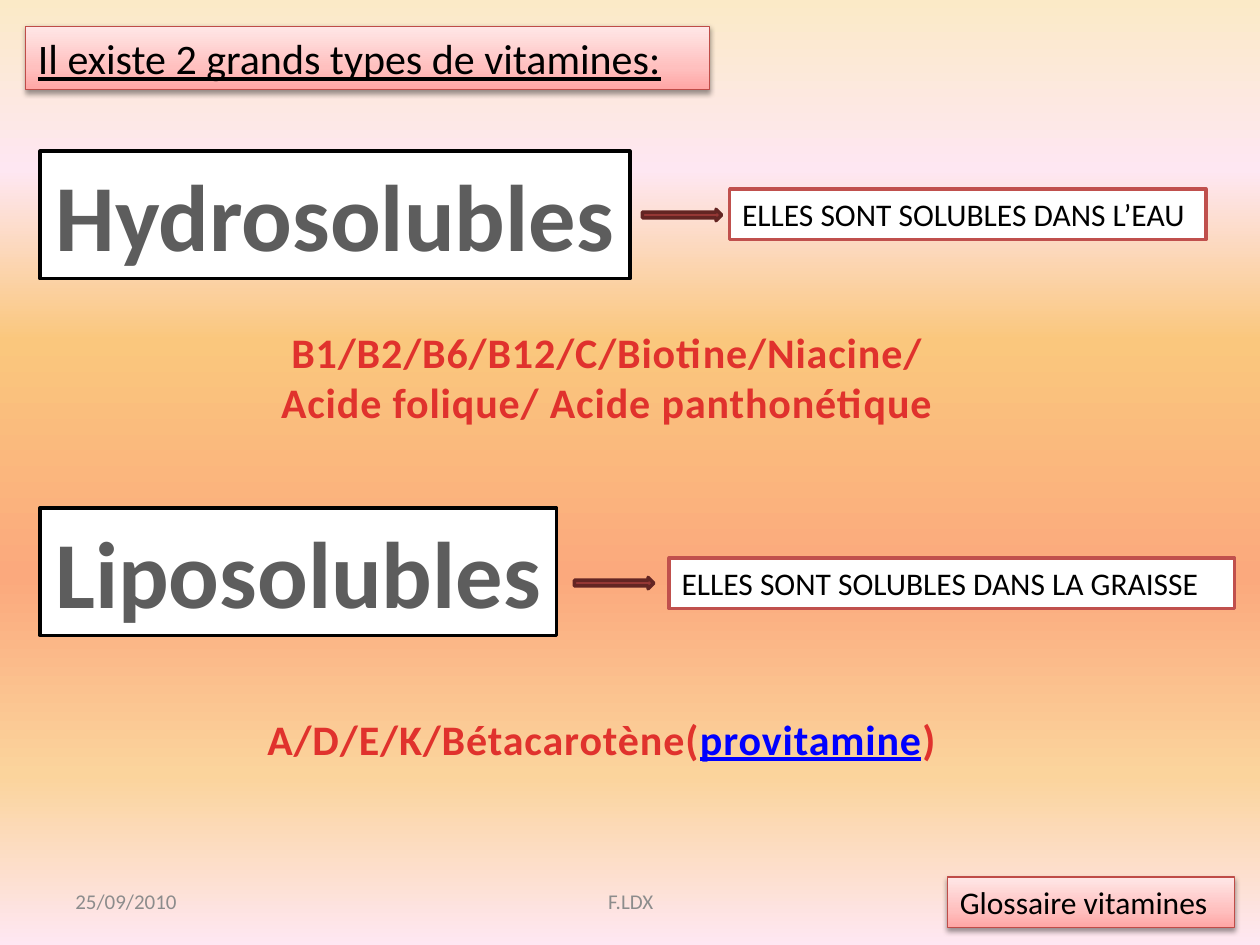
import dataclasses

import pptx
import pptx.dml.color
import pptx.enum.shapes
import pptx.enum.text
import pptx.oxml
import pptx.oxml.ns
import pptx.util

Cm, Pt = pptx.util.Cm, pptx.util.Pt
RGB = pptx.dml.color.RGBColor.from_string
qn = pptx.oxml.ns.qn
SHAPE = pptx.enum.shapes.MSO_SHAPE
ALIGN = pptx.enum.text.PP_ALIGN
ANCHOR = pptx.enum.text.MSO_ANCHOR
NS = pptx.oxml.ns.nsdecls("a")


@dataclasses.dataclass(frozen=True)
class Theme:
    font: str = "Calibri"
    black: str = "000000"
    white: str = "FFFFFF"
    heading: str = "5D5D5D"
    vitamins: str = "E0322D"
    link: str = "0000FF"
    footer: str = "8C8C8C"
    note_line: str = "C0504D"
    label_line: str = "BF4C48"
    arrow: str = "953735"
    arrow_line: str = "632523"
    label: tuple = ((0, "FFA6A5"), (35, "FFC0BF"), (100, "FFE7E7"))
    background: tuple = ((0, "FBEAC7"), (18, "FEE7F2"), (36, "FAC77D"),
                         (61, "FBA97D"), (82, "FBD49C"), (100, "FEE7F2"))
    heading_size: int = 54
    title_size: int = 24
    list_size: int = 24
    note_size: int = 18
    footer_size: int = 12


T = Theme()


def set_gradient(fill, element, stops, angle):
    """Give a fill, held in the element, its stops and clockwise angle."""
    fill.gradient()
    grad = element.find(".//" + qn("a:gradFill"))
    gs_list = grad.find(qn("a:gsLst"))
    for gs in list(gs_list):
        gs_list.remove(gs)
    for pos, color in stops:
        gs_list.append(pptx.oxml.parse_xml(
            f'<a:gs {NS} pos="{pos * 1000}"><a:srgbClr val="{color}"/></a:gs>'))
    grad.find(qn("a:lin")).set("ang", str(angle * 60000))


def place(sp, box):
    sp.left, sp.top, sp.width, sp.height = (Cm(v) for v in box)


def set_line(sp, color, width):
    sp.line.color.rgb = RGB(color)
    sp.line.width = Pt(width)


def add_box(slide, box, fill, line, width=2, kind=SHAPE.RECTANGLE):
    sp = slide.shapes.add_shape(kind, *(Cm(v) for v in box))
    sp.shadow.inherit = False
    sp.fill.solid()
    sp.fill.fore_color.rgb = RGB(fill)
    set_line(sp, line, width)
    return sp


def write(sp, lines, size, color, align=ALIGN.LEFT, anchor=ANCHOR.TOP,
          wrap=True, bold=False, underline=False):
    """Write one paragraph for each line; a line is a list of runs."""
    tf = sp.text_frame
    tf.word_wrap = wrap
    tf.auto_size = pptx.enum.text.MSO_AUTO_SIZE.NONE
    tf.vertical_anchor = anchor
    for i, runs in enumerate(lines):
        p = tf.add_paragraph() if i else tf.paragraphs[0]
        p.alignment = align
        p.font.name, p.font.size = T.font, Pt(size)
        p.font.bold, p.font.underline = bold, underline
        p.font.color.rgb = RGB(color)
        for text in runs:
            p.add_run().text = text


def add_text(slide, box, lines, size, color, **style):
    sp = slide.shapes.add_textbox(*(Cm(v) for v in box))
    write(sp, lines, size, color, **style)
    return sp


def style_label(sp):
    """Pink gradient, thin red line and soft shadow."""
    set_gradient(sp.fill, sp.element, T.label, 270)
    set_line(sp, T.label_line, 0.75)
    sp.shadow.inherit = False
    sp.element.spPr.find(qn("a:effectLst")).append(pptx.oxml.parse_xml(
        f'<a:outerShdw {NS} blurRad="{Pt(3.1)}" dist="{Pt(1.6)}" dir="5400000" '
        f'rotWithShape="0"><a:srgbClr val="{T.black}"><a:alpha val="38000"/>'
        '</a:srgbClr></a:outerShdw>'))


def title_label(slide, box, text):
    sp = slide.shapes.title
    place(sp, box)
    style_label(sp)
    write(sp, [[text]], T.title_size, T.black, underline=True)


def vitamin_family(slide, box, name, note, note_box, arrow_at, lines, list_box):
    """Heading in the box; other parts are offset from its top left corner."""
    x, y = box[:2]

    def inside(dx, dy, w, h):
        return x + dx, y + dy, w, h

    sp = add_box(slide, box, T.white, T.black)
    write(sp, [[name]], T.heading_size, T.heading, align=ALIGN.CENTER,
          wrap=False, bold=True)
    add_box(slide, inside(*arrow_at, 1.6, 0.23), T.arrow, T.arrow_line,
            kind=SHAPE.RIGHT_ARROW)
    sp = add_box(slide, inside(*note_box), T.white, T.note_line)
    write(sp, [[note]], T.note_size, T.black)

    # Vitamins of the family, slightly letter-spaced
    sp = add_text(slide, inside(*list_box), lines, T.list_size, T.vitamins,
                  align=ALIGN.CENTER, wrap=False, bold=True)
    for p in sp.text_frame.paragraphs:
        for r in p.runs:
            r.font._element.set("spc", "50")
    return sp


def footer(slide, box, date, author, source):
    x, y, w, h = box
    style = dict(size=T.footer_size, color=T.footer, anchor=ANCHOR.MIDDLE)
    add_text(slide, (x, y, 5.92, h), [[date]], **style)
    add_text(slide, (x + 7.42, y, 8.05, h), [[author]], align=ALIGN.CENTER, **style)
    label_w = 5.79
    sp = add_box(slide, (x + w - label_w, y + 0.03, label_w, h), T.white, T.label_line)
    style_label(sp)
    write(sp, [[source]], T.note_size, T.black)


def main():
    prs = pptx.Presentation()
    prs.slide_width, prs.slide_height = Cm(25.4), Cm(19.05)
    slide = prs.slides.add_slide(prs.slide_layouts.get_by_name("Title Only"))
    set_gradient(slide.background.fill, slide.element, T.background, 90)

    title_label(slide, (0.51, 0.53, 13.79, 1.27),
                "Il existe 2 grands types de vitamines:")
    vitamin_family(
        slide, (0.81, 3.05, 11.89, 2.57), "Hydrosolubles",
        "ELLES SONT SOLUBLES DANS L’EAU", (13.9, 0.76, 9.6, 1.02), (12.14, 1.17),
        [["B1/B2/B6/B12/C/Biotine/Niacine/"], ["Acide folique/ Acide panthonétique"]],
        (4.4, 3.4, 14.05, 2.31))
    sp = vitamin_family(
        slide, (0.81, 10.24, 10.41, 2.57), "Liposolubles",
        "ELLES SONT SOLUBLES DANS LA GRAISSE", (12.68, 1.01, 11.4, 1.02), (10.77, 1.4),
        [["A/D/E/K/Bétacarotène(", "provitamine", ")"]],
        (4.24, 4.01, 14.15, 1.27))
    provitamin = sp.text_frame.paragraphs[0].runs[1].font
    provitamin.color.rgb = RGB(T.link)
    provitamin.underline = True

    footer(slide, (1.27, 17.65, 23.62, 1.02), "25/09/2010", "F.LDX",
           "Glossaire vitamines")
    prs.save("out.pptx")


if __name__ == "__main__":
    main()
